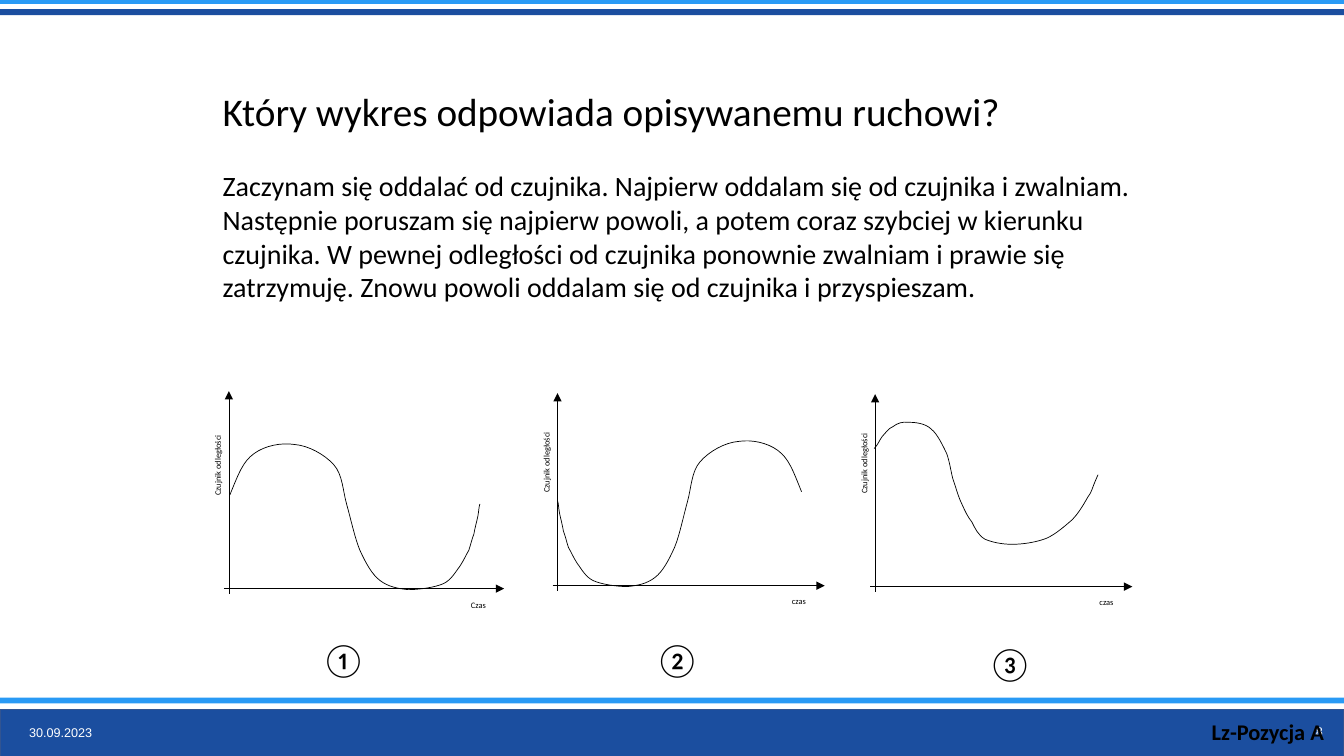
"""Build the slide asking which distance-time graph matches a described motion."""
from lxml import etree
from pptx import Presentation
from pptx import util as u
from pptx.dml.color import RGBColor
from pptx.enum import shapes, text
from pptx.oxml.ns import qn

THEME = {
    "black": "000000", "white": "FFFFFF", "navy": "1B4E9F", "sky": "299AF5", "edge": "325491",
    "title": 28, "body": 20, "number": 24, "tag": 16, "footer": 9, "axis": 6,
    "font": "Calibri", "footer_font": "Arial", "axis_line": 0.25, "curve_line": 0.5,
}
BANDS = [
    ((0, 7.04, 13.33, 0.47), "navy", "edge"),
    ((0, -0.12, 13.33, 0.16), "sky", None),
    ((0, 0.09, 13.33, 0.06), "navy", None),
    ((0, 6.92, 13.42, 0.06), "sky", None),
]
TITLE = "Który wykres odpowiada opisywanemu ruchowi?"
BODY = ("Zaczynam się oddalać od czujnika. Najpierw oddalam się od czujnika i zwalniam. "
        "Następnie poruszam się najpierw powoli, a potem coraz szybciej w kierunku czujnika. "
        "W pewnej odległości od czujnika ponownie zwalniam i prawie się zatrzymuję. "
        "Znowu powoli oddalam się od czujnika i przyspieszam.")
HILL_FIRST = [
    (2.28, 4.91), (2.37, 4.69), (2.41, 4.58), (2.52, 4.5), (2.63, 4.42), (2.79, 4.39), (2.92, 4.41),
    (3.06, 4.42), (3.22, 4.51), (3.31, 4.61), (3.4, 4.71), (3.4, 4.87), (3.44, 5.01),
    (3.48, 5.15), (3.52, 5.34), (3.57, 5.46), (3.63, 5.59), (3.69, 5.7), (3.77, 5.76),
    (3.85, 5.82), (3.94, 5.84), (4.05, 5.85), (4.15, 5.85), (4.31, 5.83), (4.4, 5.79),
    (4.48, 5.75), (4.52, 5.67), (4.56, 5.62), (4.6, 5.56), (4.62, 5.51), (4.65, 5.46),
    (4.67, 5.4), (4.68, 5.35), (4.7, 5.3), (4.71, 5.24), (4.73, 5.17), (4.74, 5.12),
    (4.75, 5.07), (4.75, 5.02), (4.76, 5),
]
VALLEY_FIRST = [(7.95 - (x - 2.28) * 2.42 / 2.48, y - 0.03) for x, y in HILL_FIRST]
SHALLOW = [
    (8.67, 4.45), (8.71, 4.41), (8.72, 4.37), (8.75, 4.33), (8.78, 4.3), (8.81, 4.25), (8.86, 4.23),
    (8.9, 4.2), (8.95, 4.18), (9.02, 4.19), (9.08, 4.19), (9.18, 4.2), (9.24, 4.26),
    (9.3, 4.31), (9.35, 4.42), (9.39, 4.5), (9.42, 4.59), (9.43, 4.67), (9.45, 4.75),
    (9.48, 4.83), (9.5, 4.92), (9.54, 5), (9.57, 5.07), (9.6, 5.13), (9.64, 5.18),
    (9.67, 5.24), (9.7, 5.31), (9.77, 5.35), (9.84, 5.38), (9.94, 5.4), (10.04, 5.4),
    (10.14, 5.4), (10.28, 5.38), (10.38, 5.34), (10.47, 5.3), (10.56, 5.22), (10.63, 5.16),
    (10.7, 5.09), (10.75, 5), (10.79, 4.93), (10.84, 4.86), (10.81, 4.89), (10.89, 4.71),
]
GRAPHS = [
    {"origin": (2.27, 5.84), "top": 3.88, "right": 5, "time": "Czas", "curve": HILL_FIRST,
     "number": "①", "number_at": (3.09, 6.29)},
    {"origin": (5.53, 5.81), "top": 3.9, "right": 8.18, "time": "czas", "curve": VALLEY_FIRST,
     "number": "②", "number_at": (6.4, 6.29)},
    {"origin": (8.68, 5.82), "top": 3.91, "right": 11.23, "time": "czas", "curve": SHALLOW,
     "number": "③", "number_at": (9.7, 6.33)},
]
DISTANCE = "Czujnik odległości"
AXIS_LABEL = {"alignment": text.PP_ALIGN.CENTER, "line_spacing": 1.07}


def rgb(name):
    return RGBColor.from_string(THEME[name])


def add_text(parent, box, lines, grow=False, inset=None, rotation=0):
    sp = parent.add_textbox(*map(u.Inches, box))
    sp.rotation = rotation
    tf = sp.text_frame
    fmt = {"word_wrap": True, "vertical_anchor": text.MSO_ANCHOR.MIDDLE}
    if grow:
        fmt["auto_size"] = text.MSO_AUTO_SIZE.SHAPE_TO_FIT_TEXT
    if inset is not None:
        fmt.update({f"margin_{side}": inset for side in ("left", "top", "right", "bottom")})
    for key, value in fmt.items():
        setattr(tf, key, value)
    for i, (words, size, font_fmt, par_fmt) in enumerate(lines):
        p = tf.add_paragraph() if i else tf.paragraphs[0]
        for key, value in par_fmt.items():
            setattr(p, key, value)
        r = p.add_run()
        r.text = words
        color = font_fmt.get("color", "black")
        r.font.color.rgb = rgb(color)
        base = {"name": THEME["font"], "size": u.Pt(THEME[size])}
        for key, value in {**base, **font_fmt}.items():
            if key != "color":
                setattr(r.font, key, value)


def add_axis(parent, start, end):
    c = parent.add_connector(shapes.MSO_CONNECTOR.STRAIGHT, *map(u.Inches, start + end))
    c.line.color.rgb = rgb("black")
    c.line.width = u.Pt(THEME["axis_line"])
    etree.SubElement(c.line._get_or_add_ln(), qn("a:tailEnd"), type="triangle")
    etree.SubElement(c._element.spPr, qn("a:effectLst"))


def add_curve(parent, points):
    pts = [(u.Inches(x), u.Inches(y)) for x, y in points]
    builder = parent.build_freeform(*pts[0])
    builder.add_line_segments(pts[1:], close=False)
    sp = builder.convert_to_shape()
    outline = sp._element.xpath(".//a:path")[0]
    steps = outline.findall(qn("a:lnTo"))
    for i in range(0, len(steps), 3):
        bezier = etree.SubElement(outline, qn("a:cubicBezTo"))
        for step in steps[i:i + 3]:
            bezier.append(step[0])
            outline.remove(step)
    sp.shadow.inherit = False
    sp.fill.background()
    sp.line.color.rgb = rgb("black")
    sp.line.width = u.Pt(THEME["curve_line"])


def add_graph(s, graph):
    x, y = graph["origin"]
    right = graph["right"]
    g = s.shapes.add_group_shape().shapes
    add_axis(g, (x, y + 0.05), (x, graph["top"]))
    add_text(g, (x - 1.04, y - 1.46, 1.85, 0.48), [(DISTANCE, "axis", {}, AXIS_LABEL)],
             inset=0, rotation=270)
    add_axis(g, (x - 0.05, y), (right, y))
    add_text(g, (right - 0.47, y + 0.05, 0.43, 0.21),
             [(graph["time"], "axis", {}, {**AXIS_LABEL, "space_after": u.Pt(8)})], inset=0)
    add_curve(g, graph["curve"])
    add_text(s.shapes, (*graph["number_at"], 0.86, 0.5),
             [(graph["number"], "number", {}, {})], grow=True)


def main():
    prs = Presentation()
    prs.slide_width, prs.slide_height = u.Inches(13.33), u.Inches(7.5)
    s = prs.slides.add_slide(prs.slide_layouts[6])
    for box, fill, edge in BANDS:
        sp = s.shapes.add_shape(shapes.MSO_SHAPE.RECTANGLE, *map(u.Inches, box))
        sp.shadow.inherit = False
        sp.fill.solid()
        sp.fill.fore_color.rgb = rgb(fill)
        if edge:
            sp.line.color.rgb = rgb(edge)
            sp.line.width = u.Pt(1)
        else:
            sp.line.fill.background()
    footer = {"name": THEME["footer_font"], "color": "white"}
    add_text(s.shapes, (0.19, 7.07, 1.03, 0.4), [("30.09.2023", "footer", footer, {})])
    add_text(s.shapes, (12.68, 7.06, 0.54, 0.4),
             [("8", "footer", footer, {"alignment": text.PP_ALIGN.RIGHT})])
    add_text(s.shapes, (11.92, 7.07, 1.53, 0.37),
             [("Lz-Pozycja A", "tag", {"bold": True}, {})], grow=True)
    add_text(s.shapes, (2.11, 0.81, 9.26, 2.26),
             [(TITLE, "title", {}, {}), (BODY, "body", {}, {"space_before": u.Pt(24.4)})], grow=True)
    for graph in GRAPHS:
        add_graph(s, graph)
    prs.save("out.pptx")


if __name__ == "__main__":
    main()
